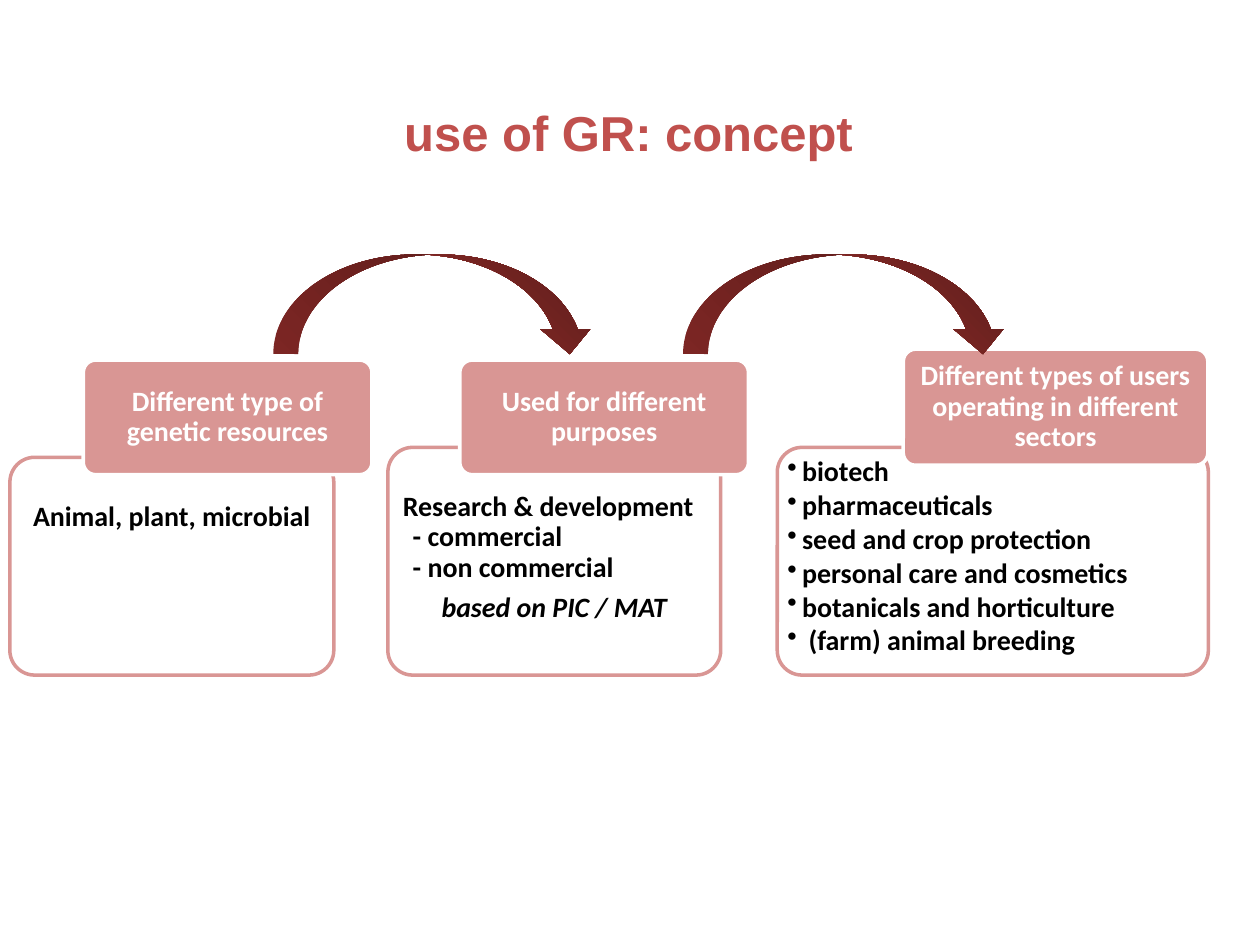
from lxml import etree
from pptx import Presentation
from pptx.dml.color import RGBColor
from pptx.enum.shapes import MSO_SHAPE as Shape
from pptx.enum.text import MSO_ANCHOR as Anchor, PP_ALIGN as Align
from pptx.oxml import parse_xml
from pptx.oxml.ns import nsdecls, qn
from pptx.util import Cm, Pt

ROSE, RED, WHITE, BLACK = "D99694", "C0504D", "FFFFFF", "000000"
PANEL_BOTTOM = 13.61
CORNER_INSET = 0.29  # share of the corner radius kept free of text


def color(target, hex_value):
    target.rgb = RGBColor.from_string(hex_value)


def add_box(slide, kind, left, top, width, height):
    box = slide.shapes.add_shape(kind, Cm(left), Cm(top), Cm(width), Cm(height))
    box.shadow.inherit = False
    return box


def add_rounded(slide, bounds, radius, fill, line, margin, top_margin, anchor):
    box = add_box(slide, Shape.ROUNDED_RECTANGLE, *bounds)
    box.adjustments[0] = radius / min(bounds[2:])
    box.fill.solid()
    color(box.fill.fore_color, fill)
    color(box.line.color, line)
    box.line.width = Pt(2)
    frame = box.text_frame
    frame.word_wrap = True
    frame.vertical_anchor = anchor
    inset = radius * CORNER_INSET
    frame.margin_left = frame.margin_right = Cm(margin - inset)
    frame.margin_top = Cm(top_margin - inset)
    frame.margin_bottom = 0
    return box


def format_runs(paragraph, size, font_name, hex_value, italic=False):
    for run in paragraph.runs:
        font = run.font
        font.size, font.name = Pt(size), font_name
        font.bold, font.italic = True, italic
        color(font.color, hex_value)


def add_title(slide, text):
    title = slide.shapes.title
    title.left, title.top, title.width, title.height = (
        Cm(7.49), Cm(1.93), Cm(10.36), Cm(1.45))
    frame = title.text_frame
    frame.text = text
    frame.word_wrap = False
    frame.vertical_anchor = Anchor.MIDDLE
    frame.paragraphs[0].alignment = Align.CENTER
    format_runs(frame.paragraphs[0], 28, "Arial", RED)


def add_header(slide, bounds, text):
    header = add_rounded(slide, bounds, 0.25, ROSE, WHITE, 0.15, 0.07, Anchor.MIDDLE)
    header.text_frame.text = text
    paragraph = header.text_frame.paragraphs[0]
    paragraph.alignment = Align.CENTER
    paragraph.line_spacing = 0.9
    format_runs(paragraph, 16, "Calibri", WHITE)


def add_panel(slide, left, top, width, top_margin):
    bounds = (left, top, width, PANEL_BOTTOM - top)
    panel = add_rounded(slide, bounds, 0.5, WHITE, ROSE, 0.2, top_margin, Anchor.TOP)
    # Slightly transparent white
    white = panel.fill._xPr.find(qn("a:solidFill"))[0]
    etree.SubElement(white, qn("a:alpha"), val="90000")
    return panel.text_frame


def add_line(frame, text, align=Align.LEFT, indent=0.3, hanging=0.3,
             after=2.1, bullet=False, italic=False):
    first = frame.paragraphs[0]
    paragraph = frame.add_paragraph() if first.runs else first
    paragraph.text = text
    paragraph.alignment = align
    paragraph.line_spacing = 0.9
    paragraph.space_after = Pt(after)
    properties = paragraph._p.get_or_add_pPr()
    properties.set("marL", str(Cm(indent)))
    properties.set("indent", str(-Cm(hanging)))
    if bullet:
        etree.SubElement(properties, qn("a:buChar"), char="•")
    format_runs(paragraph, 16, "Calibri", BLACK, italic)


def add_arrow(slide, left, width):
    arrow = add_box(slide, Shape.CURVED_DOWN_ARROW, left, 5.13, width, 2.01)
    arrow.line.fill.background()
    # Radial gradient that starts in the top right corner
    stops = "".join(
        f'<a:gs pos="{position}"><a:srgbClr val="{shade}"/></a:gs>'
        for position, shade in ((0, "5D1D1B"), (50000, "842926"), (100000, "9C302E")))
    gradient = parse_xml(
        f'<a:gradFill {nsdecls("a")} rotWithShape="1"><a:gsLst>{stops}</a:gsLst>'
        '<a:path path="circle"><a:fillToRect l="100000" b="100000"/></a:path>'
        '</a:gradFill>')
    arrow._element.spPr.find(qn("a:prstGeom")).addnext(gradient)


def main():
    deck = Presentation()
    deck.slide_width, deck.slide_height = Cm(25.4), Cm(19.05)
    slide = deck.slides.add_slide(deck.slide_layouts[5])
    add_title(slide, "use of GR: concept")

    # Resources
    resources = add_panel(slide, 0.2, 9.22, 6.53, 0.91)
    add_line(resources, "Animal, plant, microbial", Align.CENTER)
    add_header(slide, (1.68, 7.26, 5.82, 2.31), "Different type of genetic resources")
    add_arrow(slide, 5.51, 6.48)

    # Purposes
    purposes = add_panel(slide, 7.82, 9.02, 6.71, 0.91)
    add_line(purposes, "Research & development\v- commercial\v- non commercial",
             hanging=0.2, after=6)
    add_line(purposes, "based on PIC / MAT", Align.CENTER, italic=True)
    add_header(slide, (9.27, 7.26, 5.82, 2.31), "Used for different purposes")

    # Users and their sectors
    users = add_panel(slide, 15.67, 9.02, 8.69, 0.2)
    for sector in ("biotech", "pharmaceuticals", "seed and crop protection",
                   "personal care and cosmetics", "botanicals and horticulture"):
        add_line(users, sector, bullet=True)
    add_line(users, "(farm) animal breeding", indent=0.43, hanging=0.43, bullet=True)
    add_header(slide, (18.21, 7.04, 6.14, 2.34),
               "Different types of users operating in different sectors")
    add_arrow(slide, 13.77, 6.55)

    deck.save("out.pptx")


if __name__ == "__main__":
    main()
